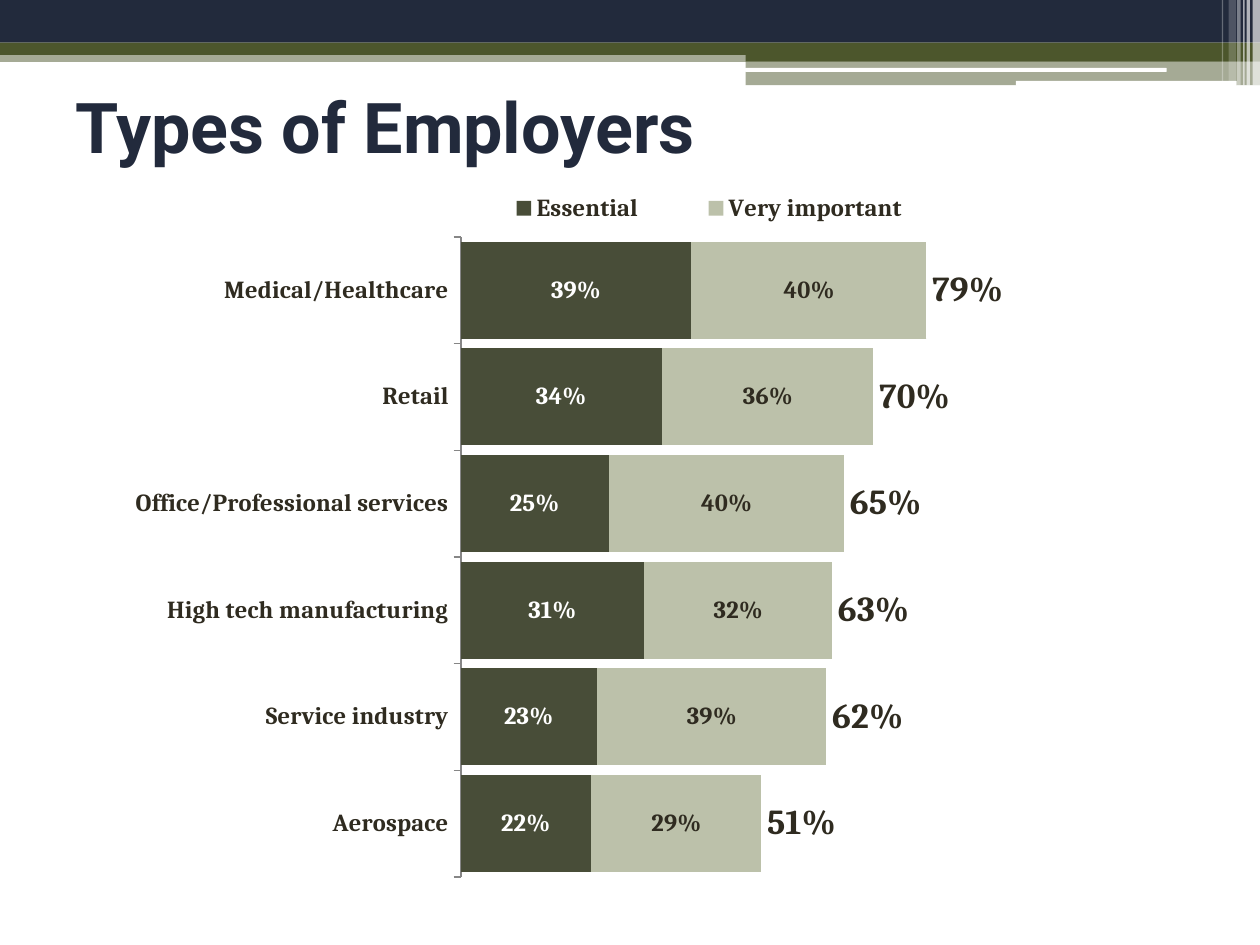
from lxml import etree
from pptx import Presentation
from pptx import util as u
from pptx.chart.data import CategoryChartData
from pptx.dml.color import RGBColor
from pptx.enum import chart as charts, shapes, text
from pptx.oxml import parse_xml
from pptx.oxml.ns import qn

THEME = {
    "navy": "222A3C", "olive": "4C562C", "white": "FFFFFF", "ink": "2F2B20",
    "dark_bar": "484D38", "pale_bar": "BCC1AA", "axis": "868686",
    "heading": "Roboto", "body": "Cambria",
    "title_size": 40, "label_size": 14, "total_size": 20,
}
TITLE = "Types of Employers"
EMPLOYERS = ["Aerospace", "Service industry", "High tech manufacturing",
             "Office/Professional services", "Retail", "Medical/Healthcare"]
# name, values, fill, label colour, label size
SERIES = [
    ("Essential", (0.22, 0.23, 0.31, 0.25, 0.34, 0.39), "dark_bar", "white", "label_size"),
    ("Very important", (0.29, 0.39, 0.32, 0.40, 0.36, 0.40), "pale_bar", "ink", "label_size"),
    ("Percent postive", (0.51, 0.62, 0.63, 0.65, 0.70, 0.79), None, "ink", "total_size"),
]
# left, top, width, height in cm, colour, opacity in percent
BANDS = [
    (0, 1.02, 25.4, 0.23, "olive", 50),
    (0, 0, 25.4, 0.86, "navy", 100),
    (0, 0.86, 25.4, 0.25, "olive", 100),
    (15.03, 0.99, 10.37, 0.25, "olive", 100),
    (15.03, 1.24, 10.37, 0.48, "olive", 50),
]
PILLS = [(15.02, 1.37, 8.5, 0.08, "white", 100), (20.48, 1.63, 4.45, 0.1, "white", 100)]
# left, width, height in cm, opacity in percent
STRIPES = [(25.25, 0.15, 1.73, 65), (25.13, 0.07, 1.73, 65), (25.06, 0.03, 1.73, 60),
           (24.94, 0.07, 1.73, 40), (24.77, 0.15, 1.63, 20), (24.63, 0.03, 1.63, 30)]
PLOT_AREA = (0.351, 0.094, 0.625, 0.867)
LEGEND_AREA = (0.345, 0.03, 0.45, 0.05)


def colour(name):
    return RGBColor.from_string(THEME[name])


def style_font(font, size, tint="ink", face="body"):
    font.name, font.size, font.bold = THEME[face], u.Pt(THEME[size]), True
    font.color.rgb = colour(tint)


def add_bar(page, kind, left, top, width, height, tint, opacity):
    bar = page.shapes.add_shape(kind, *map(u.Cm, (left, top, width, height)))
    bar.shadow.inherit = False
    bar.fill.solid()
    bar.fill.fore_color.rgb = colour(tint)
    bar.line.fill.background()
    if opacity < 100:
        solid = bar.fill._xPr.find(qn("a:solidFill"))
        etree.SubElement(solid[0], qn("a:alpha"), val=str(opacity * 1000))


def manual_layout(area, inner=False):
    target = '<c:layoutTarget val="inner"/>' if inner else ""
    modes = "".join(f'<c:{axis}Mode val="edge"/>' for axis in "xy")
    sizes = "".join(f'<c:{key} val="{value}"/>' for key, value in zip("xywh", area))
    return parse_xml(
        '<c:layout xmlns:c="http://schemas.openxmlformats.org/drawingml/2006/chart">'
        f"<c:manualLayout>{target}{modes}{sizes}</c:manualLayout></c:layout>")


def set_layout(parent, layout, after=None):
    for old in parent.findall(qn("c:layout")):
        parent.remove(old)
    if after is None:
        parent.insert(0, layout)
    else:
        after.addnext(layout)


deck = Presentation()
deck.slide_width, deck.slide_height = u.Cm(25.4), u.Cm(19.05)
page = deck.slides.add_slide(deck.slide_layouts[5])

# Header decoration
for band in BANDS:
    add_bar(page, shapes.MSO_SHAPE.RECTANGLE, *band)
for pill in PILLS:
    add_bar(page, shapes.MSO_SHAPE.ROUNDED_RECTANGLE, *pill)
for left, width, height, opacity in STRIPES:
    add_bar(page, shapes.MSO_SHAPE.RECTANGLE, left, 0, width, height, "white", opacity)

# Title, in front of the header
title = page.shapes.title
title.left, title.top, title.width, title.height = map(u.Cm, (1.27, 1.47, 22.86, 2.11))
title.text_frame.vertical_anchor = text.MSO_ANCHOR.MIDDLE
para = title.text_frame.paragraphs[0]
para.alignment = text.PP_ALIGN.LEFT
span = para.add_run()
span.text = TITLE
style_font(span.font, "title_size", "navy", "heading")
title._element.getparent().append(title._element)

# Stacked bar chart
data = CategoryChartData(number_format="0%")
data.categories = EMPLOYERS
for name, values, *_ in SERIES:
    data.add_series(name, values)
chart = page.shapes.add_chart(charts.XL_CHART_TYPE.BAR_STACKED,
                              *map(u.Cm, (1.27, 3.38, 22.86, 14.88)), data).chart
chart.has_title = False
style_font(chart.font, "label_size")
plot = chart.plots[0]
plot.gap_width, plot.overlap, plot.vary_by_categories = 10, 100, False
set_layout(chart._chartSpace.chart.plotArea, manual_layout(PLOT_AREA, inner=True))

# Series and their labels; the totals are unfilled bars
for series, (_, _, fill, tint, size) in zip(plot.series, SERIES):
    labels = series.data_labels
    labels.show_value = True
    labels.number_format, labels.number_format_is_linked = "0%", False
    style_font(labels.font, size, tint)
    if fill:
        series.format.fill.solid()
        series.format.fill.fore_color.rgb = colour(fill)
        labels.position = charts.XL_LABEL_POSITION.CENTER
    else:
        series.format.fill.background()
        series.format.line.color.rgb = colour("white")
        series.format.line.width = u.Pt(1.5)
        labels.position = charts.XL_LABEL_POSITION.INSIDE_BASE

# Axes
names = chart.category_axis
names.major_tick_mark = charts.XL_TICK_MARK.OUTSIDE
names.format.line.color.rgb = colour("axis")
style_font(names.tick_labels.font, "label_size")
scale = chart.value_axis
scale.minimum_scale, scale.maximum_scale, scale.major_unit = 0, 1.2, 0.2
scale.has_major_gridlines = False
scale.visible = False

# Legend without its first entry
chart.has_legend = True
legend = chart.legend
legend.position = charts.XL_LEGEND_POSITION.TOP
legend.include_in_layout = False
style_font(legend.font, "label_size")
entry = parse_xml(
    '<c:legendEntry xmlns:c="http://schemas.openxmlformats.org/drawingml/2006/chart">'
    '<c:idx val="0"/><c:delete val="1"/></c:legendEntry>')
legend._element.find(qn("c:legendPos")).addnext(entry)
set_layout(legend._element, manual_layout(LEGEND_AREA), after=entry)

deck.save("out.pptx")
